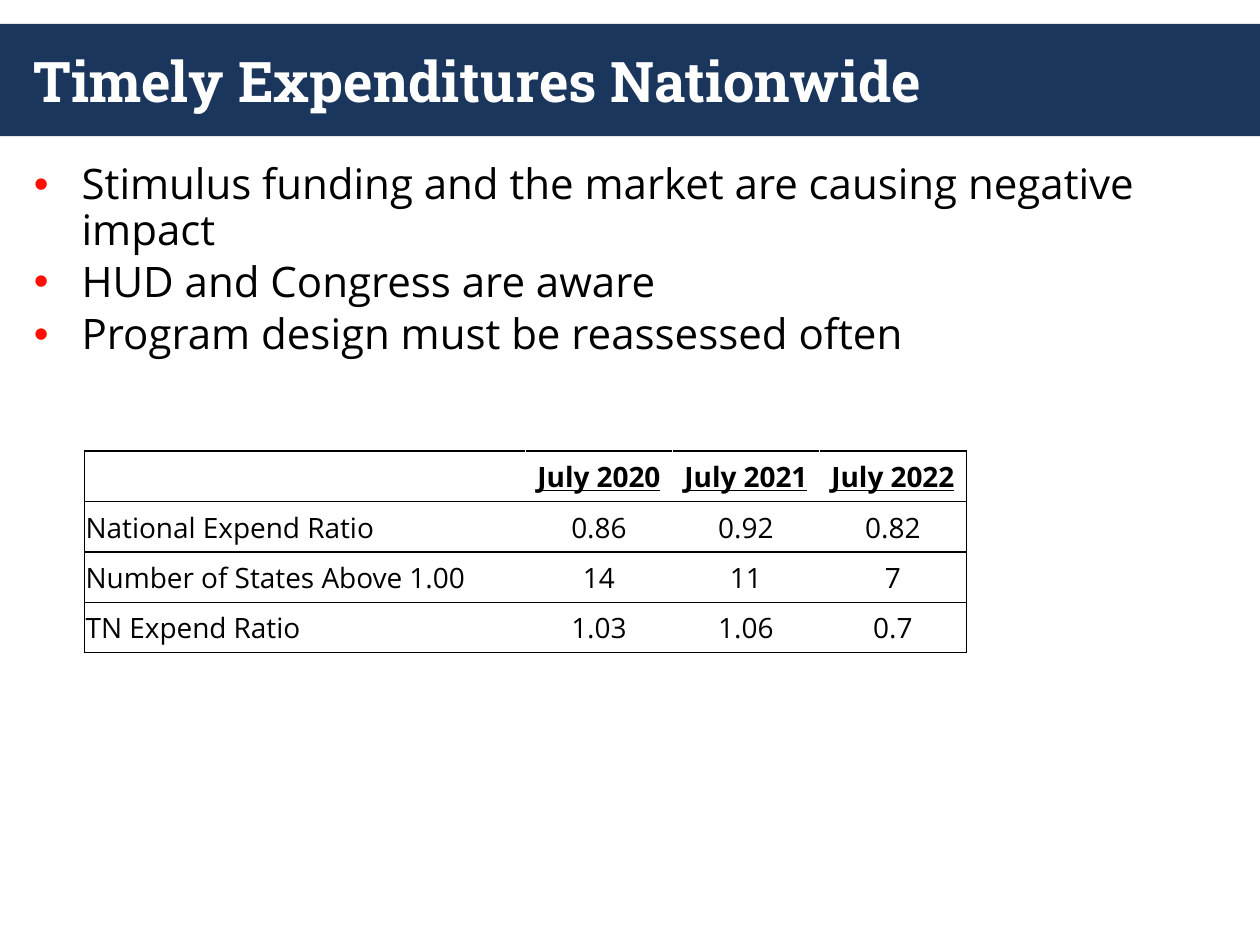
from dataclasses import dataclass

from lxml.etree import SubElement
from pptx import Presentation
from pptx.dml.color import RGBColor
from pptx.enum.shapes import MSO_SHAPE as Shape
from pptx.enum.text import MSO_ANCHOR as Anchor, PP_ALIGN as Align
from pptx.oxml import parse_xml
from pptx.oxml.ns import nsdecls, qn
from pptx.util import Inches, Pt


@dataclass(frozen=True)
class Theme:
    navy: str = "1B365D"
    white: str = "FFFFFF"
    black: str = "000000"
    red: str = "FF0F00"
    title_font: str = "Roboto Slab"
    body_font: str = "Open Sans"
    title_size: int = 32
    body_size: int = 24
    table_size: int = 16


@dataclass(frozen=True)
class Box:
    left: float
    top: float
    width: float
    height: float

    def emu(self):
        return [Inches(v) for v in (self.left, self.top, self.width, self.height)]


THEME = Theme()
SLIDE_WIDTH, SLIDE_HEIGHT = 10, 7.5
MARGIN = 0.17
CONTENT_WIDTH = SLIDE_WIDTH - 2 * MARGIN

BULLETS = [
    "Stimulus funding and the market are causing negative impact",
    "HUD and Congress are aware",
    "Program design must be reassessed often",
]
ROWS = [
    ("", "July 2020", "July 2021", "July 2022"),
    ("National Expend Ratio", "0.86", "0.92", "0.82"),
    ("Number of States Above 1.00", "14", "11", "7"),
    ("TN Expend Ratio", "1.03", "1.06", "0.7"),
]


def add_run(paragraph, text, font_name, size, color, bold=False, underline=False):
    run = paragraph.add_run()
    run.text = text
    font = run.font
    font.name, font.size = font_name, Pt(size)
    font.bold, font.underline = bold, underline
    font.color.rgb = RGBColor.from_string(color)


def add_title_band(slide, box, text):
    # Full-width band
    band = slide.shapes.add_shape(Shape.RECTANGLE, *box.emu())
    band.shadow.inherit = False
    band.fill.solid()
    band.fill.fore_color.rgb = RGBColor.from_string(THEME.navy)
    band.line.fill.background()

    # Title over the band, inside the slide margins
    title_box = Box(box.left + MARGIN, box.top, box.width - 2 * MARGIN, box.height)
    frame = slide.shapes.add_textbox(*title_box.emu()).text_frame
    frame.word_wrap = True
    frame.vertical_anchor = Anchor.MIDDLE
    add_run(frame.paragraphs[0], text, THEME.title_font, THEME.title_size,
            THEME.white, bold=True)


def add_bullet(paragraph):
    properties = paragraph._p.get_or_add_pPr()
    indent = Inches(0.38)
    properties.set("marL", str(indent))
    properties.set("indent", str(-indent))
    color = SubElement(properties, qn("a:buClr"))
    SubElement(color, qn("a:srgbClr"), val=THEME.red)
    SubElement(properties, qn("a:buFont"), typeface="Arial")
    SubElement(properties, qn("a:buChar"), char="•")


def add_bullet_list(slide, box, items):
    frame = slide.shapes.add_textbox(*box.emu()).text_frame
    frame.word_wrap = True
    for index, item in enumerate(items):
        paragraph = frame.paragraphs[0] if index == 0 else frame.add_paragraph()
        add_bullet(paragraph)
        paragraph.line_spacing = 0.9
        if index:
            paragraph.space_before = Pt(4)
        add_run(paragraph, item, THEME.body_font, THEME.body_size, THEME.black)


def set_borders(cell, **colors):
    """Draw one-point borders; the lines must come before the cell's fill."""
    properties = cell._tc.get_or_add_tcPr()
    for position, side in enumerate("LRTB"):
        properties.insert(position, parse_xml(
            f'<a:ln{side} {nsdecls("a")} w="{Pt(1)}"><a:solidFill>'
            f'<a:srgbClr val="{colors[side]}"/></a:solidFill></a:ln{side}>'))


def add_ratio_table(slide, box, rows):
    column_count = len(rows[0])
    table = slide.shapes.add_table(len(rows), column_count, *box.emu()).table
    table.first_row = table.horz_banding = False

    # One wide label column, then equal value columns
    value_width = box.width / 6
    label_width = box.width - value_width * (column_count - 1)
    for index, column in enumerate(table.columns):
        column.width = Inches(value_width if index else label_width)
    for row in table.rows:
        row.height = Inches(box.height / len(rows))

    # Cells: black frame and row rules, white column rules
    for row_index, row in enumerate(rows):
        for column_index, text in enumerate(row):
            cell = table.cell(row_index, column_index)
            cell.margin_left = cell.margin_top = cell.margin_right = Inches(0.01)
            cell.margin_bottom = 0
            cell.vertical_anchor = Anchor.MIDDLE
            cell.fill.background()
            set_borders(
                cell,
                L=THEME.white if column_index else THEME.black,
                R=THEME.black if column_index == column_count - 1 else THEME.white,
                T=THEME.black,
                B=THEME.black,
            )
            if text:
                header = row_index == 0
                paragraph = cell.text_frame.paragraphs[0]
                paragraph.alignment = Align.CENTER if column_index else Align.LEFT
                add_run(paragraph, text, THEME.body_font, THEME.table_size,
                        THEME.black, bold=header, underline=header)


def main():
    presentation = Presentation()
    presentation.slide_width = Inches(SLIDE_WIDTH)
    presentation.slide_height = Inches(SLIDE_HEIGHT)
    slide = presentation.slides.add_slide(presentation.slide_layouts[6])

    add_title_band(slide, Box(0, 0.19, SLIDE_WIDTH, 0.89),
                   "Timely Expenditures Nationwide")
    add_bullet_list(slide, Box(MARGIN, 1.25, CONTENT_WIDTH, 2.33), BULLETS)
    add_ratio_table(slide, Box(0.67, 3.58, 7, 1.6), ROWS)

    presentation.save("out.pptx")


if __name__ == "__main__":
    main()
